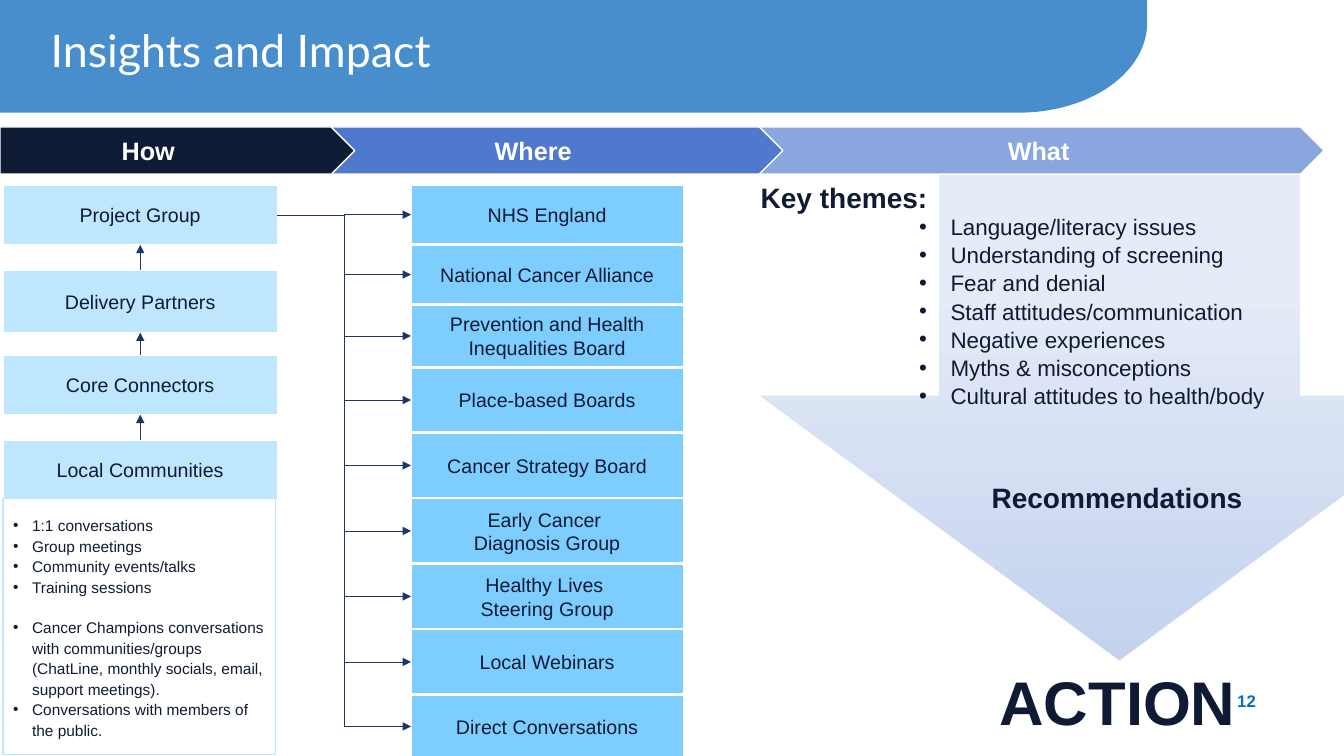
"""Build the "Insights and Impact" slide: how insight is gathered, where it goes and what it says."""
import copy
import math
from dataclasses import dataclass

import lxml.etree
import pptx
import pptx.dml.color
import pptx.enum.dml
import pptx.enum.shapes
import pptx.enum.text
import pptx.oxml.ns
import pptx.util

Cm = pptx.util.Cm
Pt = pptx.util.Pt
qn = pptx.oxml.ns.qn
RGB = pptx.dml.color.RGBColor.from_string
SHAPE = pptx.enum.shapes.MSO_SHAPE
LINK = pptx.enum.shapes.MSO_CONNECTOR
ALIGN = pptx.enum.text.PP_ALIGN
ANCHOR = pptx.enum.text.MSO_ANCHOR
AUTO_SIZE = pptx.enum.text.MSO_AUTO_SIZE


@dataclass(frozen=True)
class Theme:
    ink: str = "0F1B34"
    white: str = "FFFFFF"
    banner: str = "498ECC"
    where: str = "4E79CD"
    what: str = "89A6DE"
    group: str = "BEE6FF"
    board: str = "7ECDFF"
    link: str = "1D3667"
    arrow_top: str = "E5EBF7"
    arrow_tip: str = "C4D2EE"
    number: str = "0072BC"
    font: str = "Arial"
    title_font: str = "Lato"
    title_size: int = 32
    action_size: int = 44
    label_size: int = 20
    header_size: int = 18
    theme_size: int = 16
    box_size: int = 14
    number_size: int = 12
    detail_size: int = 11


theme = Theme()


def write(shape, text, size, color=theme.ink, bold=False, align=ALIGN.LEFT, font=theme.font):
    shape.text_frame.text = text
    for paragraph in shape.text_frame.paragraphs:
        paragraph.alignment = align
        for run in paragraph.runs:
            run.font.name = font
            run.font.size = Pt(size)
            run.font.bold = bold
            run.font.color.rgb = RGB(color)
        for line_break in paragraph._p.findall(qn("a:br")):
            line_break.append(copy.deepcopy(paragraph.runs[0].font._element))


def add_box(kind, left, top, width, height, fill, line=theme.white):
    box = slide.shapes.add_shape(kind, Cm(left), Cm(top), Cm(width), Cm(height))
    box.shadow.inherit = False
    box.fill.solid()
    box.fill.fore_color.rgb = RGB(fill)
    box.line.color.rgb = RGB(line)
    box.line.width = Pt(1)
    box.text_frame.word_wrap = True
    box.text_frame.vertical_anchor = ANCHOR.MIDDLE
    return box


deck = pptx.Presentation()
deck.slide_width, deck.slide_height = Cm(33.87), Cm(19.05)
slide = deck.slides.add_slide(deck.slide_layouts[1])
title, themes = slide.placeholders

corner_x, corner_y, radius_x, radius_y = 25.68, 0.58, 3.23, 2.26
curve = [
    (Cm(corner_x + radius_x * math.cos(math.radians(angle))),
     Cm(corner_y + radius_y * math.sin(math.radians(angle))))
    for angle in range(0, 91, 3)
]
outline = slide.shapes.build_freeform(0, 0)
outline.add_line_segments([(Cm(corner_x + radius_x), 0), *curve, (0, Cm(corner_y + radius_y))])
banner = outline.convert_to_shape()
banner.shadow.inherit = False
banner.fill.solid()
banner.fill.fore_color.rgb = RGB(theme.banner)
banner.line.fill.background()

title.left, title.top, title.width, title.height = Cm(1.02), Cm(0.61), Cm(25.93), Cm(2.59)
write(title, "Insights and Impact", theme.title_size, theme.white, font=theme.title_font)
title.text_frame.vertical_anchor = ANCHOR.TOP
title.text_frame.auto_size = AUTO_SIZE.NONE
title.text_frame.paragraphs[0].line_spacing = 0.9
banner.element.addnext(title.element)

action_arrow = add_box(SHAPE.DOWN_ARROW, 19.08, 3.23, 18.26, 13.44, theme.arrow_top)
action_arrow.fill.gradient()
action_arrow.fill.gradient_angle = 270
for stop, position, color in zip(
    action_arrow.fill.gradient_stops, (0.29, 1), (theme.arrow_top, theme.arrow_tip)
):
    stop.position = position
    stop.color.rgb = RGB(color)

for heading, left, width, fill, inset_left, inset_right in (
    ("What", 17.55, 15.82, theme.what, 1.98, 0.25),
    ("Where", 7.44, 12.29, theme.where, 0.25, 0.25),
    ("How", 0, 8.94, theme.ink, 0.25, 1.42),
):
    chevron = add_box(SHAPE.PENTAGON, left, 3.2, width, 1.19, fill)
    chevron.text_frame.margin_left = Cm(inset_left)
    chevron.text_frame.margin_right = Cm(inset_right)
    write(chevron, heading, theme.header_size, theme.white, True, ALIGN.CENTER)

first_top = 4.67
groups = []
for row, (name, height) in enumerate((
    ("Project Group", 1.5),
    ("Delivery Partners", 1.57),
    ("Core Connectors", 1.5),
    ("Local Communities", 1.5),
)):
    group = add_box(SHAPE.RECTANGLE, 0.08, first_top + 2.14 * row, 6.91, height, theme.group)
    write(group, name, theme.box_size, align=ALIGN.CENTER)
    groups.append(group)

boards = []
board_top = first_top
for name, height in (
    ("NHS England", 1.48),
    ("National Cancer Alliance", 1.48),
    ("Prevention and Health Inequalities Board", 1.55),
    ("Place-based Boards", 1.62),
    ("Cancer Strategy Board", 1.62),
    ("Early Cancer \vDiagnosis Group", 1.62),
    ("Healthy Lives \vSteering Group", 1.62),
    ("Local Webinars", 1.62),
    ("Direct Conversations", 1.57),
):
    board = add_box(SHAPE.RECTANGLE, 10.36, board_top, 6.86, height, theme.board)
    write(board, name, theme.box_size, align=ALIGN.CENTER)
    boards.append(board)
    board_top += height + 0.03

links = [(LINK.STRAIGHT, lower, 0, upper, 2) for upper, lower in zip(groups, groups[1:])]
links += [(LINK.ELBOW, groups[0], 3, board, 1) for board in boards]
for kind, source, source_side, target, target_side in links:
    link = slide.shapes.add_connector(kind, 0, 0, 0, 0)
    link.begin_connect(source, source_side)
    link.end_connect(target, target_side)
    link.line.color.rgb = RGB(theme.link)
    link.line.width = Pt(0.5)
    lxml.etree.SubElement(link.line._get_or_add_ln(), qn("a:tailEnd"), type="triangle")
    lxml.etree.SubElement(link.element.spPr, qn("a:effectLst"))

details = add_box(SHAPE.RECTANGLE, 0.08, 12.57, 6.86, 6.45, theme.white, theme.group)
themes.left, themes.top, themes.width, themes.height = Cm(21.64), Cm(5.21), Cm(12.23), Cm(5.05)
themes.text_frame.auto_size = AUTO_SIZE.NONE
action_arrow.element.addnext(themes.element)
for holder, size, indent, hanging, spacing, items in (
    (details, theme.detail_size, 0.48, 0.48, 1.11, (
        "1:1 conversations",
        "Group meetings",
        "Community events/talks",
        "Training sessions",
        "Cancer Champions conversations with communities/groups "
        "(ChatLine, monthly socials, email, support meetings).",
        "Conversations with members of the public.",
    )),
    (themes, theme.theme_size, 2.06, 0.79, 1.05, (
        "Language/literacy issues",
        "Understanding of screening",
        "Fear and denial",
        "Staff attitudes/communication",
        "Negative experiences",
        "Myths & misconceptions",
        "Cultural attitudes to health/body",
    )),
):
    write(holder, "\n".join(items), size)
    for paragraph in holder.text_frame.paragraphs:
        properties = paragraph._p.get_or_add_pPr()
        properties.set("marL", str(Cm(indent)))
        properties.set("indent", str(-Cm(hanging)))
        lxml.etree.SubElement(properties, qn("a:buFont"), typeface=theme.font)
        lxml.etree.SubElement(properties, qn("a:buChar"), char="•")
        paragraph.line_spacing = spacing
        paragraph.space_before = Pt(0)
details.text_frame.paragraphs[4].space_before = Pt(14)

for text, left, top, width, height, size in (
    ("Key themes:", 18.92, 4.42, 4.75, 1.12, theme.label_size),
    ("Recommendations", 24.74, 11.99, 6.88, 1.12, theme.label_size),
    ("ACTION", 24.94, 16.61, 6.53, 2.13, theme.action_size),
):
    label = slide.shapes.add_textbox(Cm(left), Cm(top), Cm(width), Cm(height))
    label.text_frame.word_wrap = False
    write(label, text, size, bold=True)

page_number = slide.shapes.add_textbox(Cm(24.28), Cm(17.15), Cm(7.62), Cm(1.02))
page_number.text_frame.word_wrap = True
page_number.text_frame.vertical_anchor = ANCHOR.MIDDLE
write(page_number, "12", theme.number_size, theme.number, True, ALIGN.RIGHT)

deck.save("out.pptx")
